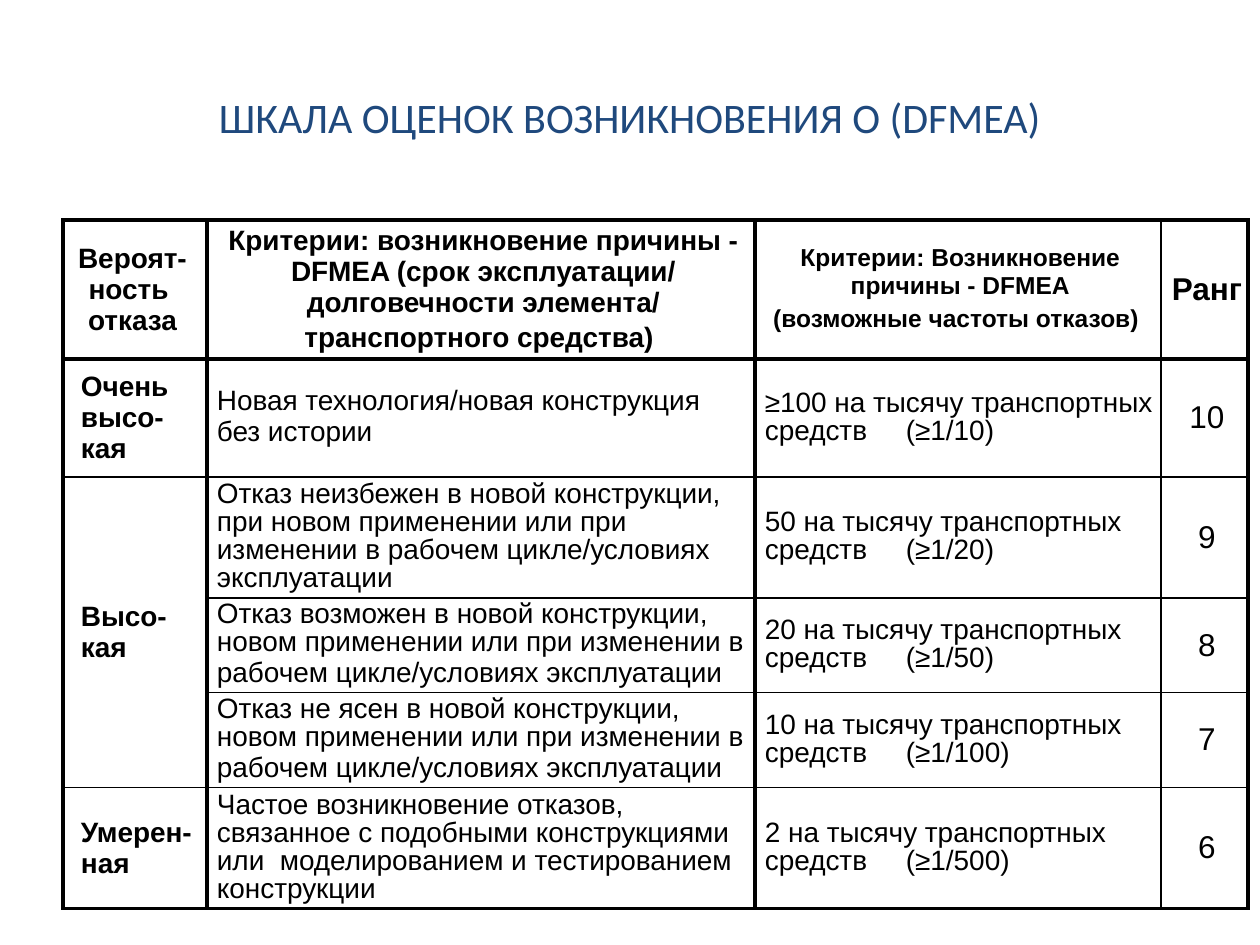
from lxml.etree import SubElement
from pptx import Presentation
from pptx.dml.color import RGBColor
from pptx.enum.text import MSO_ANCHOR as Anchor, PP_ALIGN as Align
from pptx.oxml import parse_xml
from pptx.oxml.ns import nsdecls, qn
from pptx.util import Pt

PX = 914400 // 126
BLACK = RGBColor(0x00, 0x00, 0x00)
NAVY = RGBColor(0x1F, 0x49, 0x7D)
THICK, THIN = Pt(2.25), Pt(1)

COLUMN_WIDTHS = [144, 548, 406, 87]
ROW_HEIGHTS = [139, 118, 121, 94, 95, 121]
HEADER_SIZES = [16, 16, 14, 18]
BODY_SIZES = [16, 16, 16, 18]
RULE_ROWS = [THICK, THICK, THIN, THIN, THIN, THIN, THICK]
RULE_COLUMNS = [THICK, THICK, THICK, THIN, THICK]
TAB_STOP = 141

# A trailing space is set at 18 pt and opens up the last line
ROWS = [
    ["Вероят-\nность \nотказа",
     "Критерии: возникновение причины - DFMEA (срок эксплуатации/ "
     "долговечности элемента/ транспортного средства) ",
     "Критерии: Возникновение причины - DFMEA\n(возможные частоты отказов) ",
     "Ранг"],
    ["Очень \nвысо-\nкая", "Новая технология/новая конструкция без истории ",
     "≥100 на тысячу транспортных средств\t(≥1/10)", "10"],
    ["Высо-кая",
     "Отказ неизбежен в новой конструкции, при новом применении или при "
     "изменении в рабочем цикле/условиях эксплуатации",
     "50 на тысячу транспортных средств\t(≥1/20)", "9"],
    ["",
     "Отказ возможен в новой конструкции, новом применении или при "
     "изменении в рабочем цикле/условиях эксплуатации ",
     "20 на тысячу транспортных средств\t(≥1/50)", "8"],
    ["",
     "Отказ не ясен в новой конструкции, новом применении или при "
     "изменении в рабочем цикле/условиях эксплуатации ",
     "10 на тысячу транспортных средств\t(≥1/100)", "7"],
    ["Умерен-ная",
     "Частое возникновение отказов, связанное с подобными конструкциями "
     "или  моделированием и тестированием конструкции",
     "2 на тысячу транспортных средств\t(≥1/500)", "6"],
]


def set_font(font, name, size, color, bold=False):
    font.name, font.size, font.bold = name, Pt(size), bold
    font.color.rgb = color


def set_borders(cell, **widths):
    properties = cell._tc.get_or_add_tcPr()
    for index, (side, width) in enumerate(widths.items()):
        properties.insert(index, parse_xml(
            f'<a:ln{side} {nsdecls("a")} w="{width}"><a:solidFill>'
            f'<a:srgbClr val="{BLACK}"/></a:solidFill></a:ln{side}>'))


deck = Presentation()
deck.slide_width, deck.slide_height = 1260 * PX, 945 * PX
page = deck.slides.add_slide(deck.slide_layouts[6])

# Title
box = page.shapes.add_textbox(63 * PX, 38 * PX, 1134 * PX, 157 * PX)
frame = box.text_frame
frame.word_wrap = True
frame.vertical_anchor = Anchor.MIDDLE
para = frame.paragraphs[0]
para.text = "ШКАЛА ОЦЕНОК ВОЗНИКНОВЕНИЯ O (DFMEA)"
para.alignment = Align.CENTER
set_font(para.font, "Calibri", 24, NAVY)

# Table grid
table = page.shapes.add_table(
    len(ROWS), len(COLUMN_WIDTHS), 63 * PX, 220 * PX,
    sum(COLUMN_WIDTHS) * PX, sum(ROW_HEIGHTS) * PX).table
table.first_row = table.horz_banding = False
for column, width in zip(table.columns, COLUMN_WIDTHS):
    column.width = width * PX
for row, height in zip(table.rows, ROW_HEIGHTS):
    row.height = height * PX
table.cell(2, 0).merge(table.cell(4, 0))

# Cells
for r, texts in enumerate(ROWS):
    header = r == 0
    for c, text in enumerate(texts):
        cell = table.cell(r, c)
        cell.fill.background()
        set_borders(cell, L=RULE_COLUMNS[c], R=RULE_COLUMNS[c + 1],
                    T=RULE_ROWS[r], B=RULE_ROWS[r + 1])
        if not text:
            continue

        # Insets
        cell.vertical_anchor = Anchor.MIDDLE
        left, edge = 10, 0
        if c == 0:
            left, edge = (0, 3) if header else (18, 5)
        cell.margin_left, cell.margin_right = left * PX, 5 * PX
        cell.margin_top = cell.margin_bottom = edge * PX

        # Text
        para = cell.text_frame.paragraphs[0]
        para.text = text.rstrip(" ")
        para.alignment = Align.CENTER if header or c == 3 else Align.LEFT
        size = (HEADER_SIZES if header else BODY_SIZES)[c]
        set_font(para.font, "Arial", size, BLACK, bold=header or c == 0)
        if not header and c in (1, 2):
            para.line_spacing = 0.9
        if text.endswith(" "):
            span = para.add_run()
            span.text = " "
            span.font.size = Pt(18)
        if "\t" in text:
            properties = para._p.get_or_add_pPr()
            tabs = SubElement(properties, qn("a:tabLst"))
            SubElement(tabs, qn("a:tab"), pos=str(TAB_STOP * PX), algn="l")
            properties.find(qn("a:defRPr")).addprevious(tabs)

deck.save("out.pptx")
